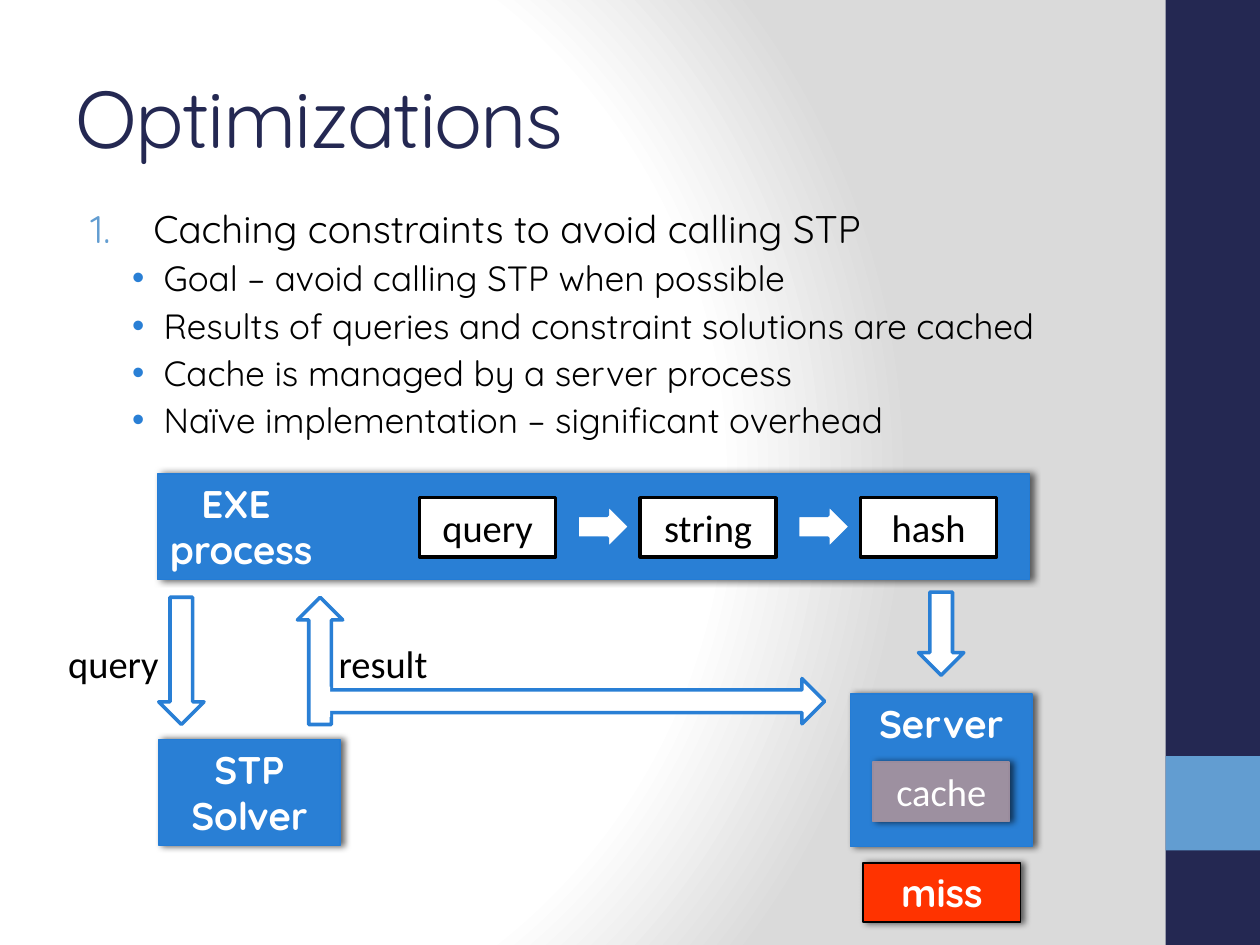
from dataclasses import dataclass
from typing import Optional

from lxml.etree import SubElement
from pptx import Presentation
from pptx.dml.color import RGBColor
from pptx.enum.shapes import MSO_SHAPE
from pptx.enum.text import MSO_ANCHOR, PP_ALIGN
from pptx.oxml import parse_xml
from pptx.oxml.ns import nsdecls, qn
from pptx.util import Inches, Pt

COLORS = {
    "navy": "242852", "sky": "629DD1", "blue": "297FD5", "blue_edge": "247CD5",
    "mauve": "9D90A0", "mauve_edge": "9A8C9D", "red": "FF3300",
    "white": "FFFFFF", "black": "000000", "gray": "DADADA",
}
HEADING_FONT, LABEL_FONT = "Quicksand", "Calibri"


@dataclass(frozen=True)
class Style:
    fill: Optional[str]
    line: Optional[str] = None
    line_width: float = 1
    font: str = LABEL_FONT
    color: str = "black"
    shadow: bool = False


@dataclass(frozen=True)
class Box:
    left: float
    top: float
    width: float
    height: float
    style: Style
    lines: tuple[str, ...] = ()


@dataclass(frozen=True)
class Arrow:
    left: float
    top: float
    length: float
    rotation: int = 0


BAND = Style("navy")
ACCENT = Style("sky")
PROCESS = Style("blue", "blue_edge", 1, HEADING_FONT, "white", True)
STEP = Style("white", "black", 2)
CACHE = Style("mauve", "mauve_edge", 1, LABEL_FONT, "white", True)
MISS = Style("red", "black", 1, HEADING_FONT, "white", True)
PLAIN = Style("white")
CLEAR = Style(None)

ARROW_WIDTH = 0.36
LABEL_SIZE = (1.08, 0.47)


def rgb(name: str) -> RGBColor:
    return RGBColor.from_string(COLORS[name])


def add_run(paragraph, text: str, size: float, font: str, color: str, bold: bool = False):
    run = paragraph.add_run()
    run.text = text
    run.font.size = Pt(size)
    run.font.name = font
    run.font.bold = bold
    run.font.color.rgb = rgb(color)
    return run


def add_shadow(shape) -> None:
    effects = shape._element.spPr.find(qn("a:effectLst"))
    outer = SubElement(effects, qn("a:outerShdw"), blurRad=str(Pt(4)), dist=str(Pt(2)),
                       dir="0", algn="ctr", rotWithShape="0")
    tint = SubElement(outer, qn("a:srgbClr"), val=COLORS["black"])
    SubElement(tint, qn("a:alpha"), val="60000")


def paint(shape, style: Style) -> None:
    shape.shadow.inherit = False
    if style.fill:
        shape.fill.solid()
        shape.fill.fore_color.rgb = rgb(style.fill)
    else:
        shape.fill.background()
    if style.line:
        shape.line.color.rgb = rgb(style.line)
        shape.line.width = Pt(style.line_width)
    else:
        shape.line.fill.background()
    if style.shadow:
        add_shadow(shape)


def add_box(slide, box: Box):
    shape = slide.shapes.add_shape(MSO_SHAPE.RECTANGLE, Inches(box.left), Inches(box.top),
                                   Inches(box.width), Inches(box.height))
    paint(shape, box.style)
    frame = shape.text_frame
    frame.word_wrap = True
    frame.vertical_anchor = MSO_ANCHOR.TOP
    for index, line in enumerate(box.lines):
        paragraph = frame.add_paragraph() if index else frame.paragraphs[0]
        paragraph.alignment = PP_ALIGN.CENTER
        add_run(paragraph, line, 22, box.style.font, box.style.color,
                bold=box.style.font == HEADING_FONT)
    return shape


def add_arrow(slide, arrow: Arrow) -> None:
    shape = slide.shapes.add_shape(MSO_SHAPE.DOWN_ARROW, Inches(arrow.left), Inches(arrow.top),
                                   Inches(ARROW_WIDTH), Inches(arrow.length))
    shape.rotation = arrow.rotation
    paint(shape, Style("white", "blue", 2))


def set_background(slide) -> None:
    stops = "".join(f'<a:gs pos="{position}"><a:srgbClr val="{COLORS[name]}"/></a:gs>'
                    for position, name in ((0, "white"), (75000, "white"), (100000, "gray")))
    slide._element.cSld.insert(0, parse_xml(
        f'<p:bg {nsdecls("p", "a")}><p:bgPr><a:gradFill rotWithShape="1">'
        f'<a:gsLst>{stops}</a:gsLst><a:path path="circle">'
        '<a:fillToRect l="20000" t="50000" r="100000" b="50000"/></a:path>'
        '</a:gradFill><a:effectLst/></p:bgPr></p:bg>'))


def add_title(slide, text: str) -> None:
    title = slide.shapes.title
    title.left, title.top = Inches(0.5), Inches(0.3)
    title.width, title.height = Inches(8.33), Inches(1.25)
    title.text_frame.vertical_anchor = MSO_ANCHOR.MIDDLE
    paragraph = title.text_frame.paragraphs[0]
    paragraph.alignment = PP_ALIGN.LEFT
    run = add_run(paragraph, text, 46, HEADING_FONT, "navy")
    run.font._element.set("spc", "-100")


def add_points(slide, heading: str, points: list[str]) -> None:
    frame = slide.shapes.add_textbox(Inches(0.5), Inches(1.58), Inches(8.33),
                                     Inches(2.18)).text_frame
    frame.word_wrap = True
    for index, text in enumerate([heading, *points]):
        paragraph = frame.add_paragraph() if index else frame.paragraphs[0]
        paragraph.level = 1 if index else 0
        paragraph.space_before = Pt(3)
        margin, hanging, size, color = (0.7, 0.25, 20, "blue") if index else (0.62, 0.5, 22, "sky")
        properties = paragraph._p.get_or_add_pPr()
        properties.set("marL", str(Inches(margin)))
        properties.set("indent", str(-Inches(hanging)))
        SubElement(SubElement(properties, qn("a:buClr")), qn("a:srgbClr"), val=COLORS[color])
        if index:
            SubElement(properties, qn("a:buFont"), typeface="Arial")
            SubElement(properties, qn("a:buChar"), char="•")
        else:
            SubElement(properties, qn("a:buFont"), typeface=HEADING_FONT)
            SubElement(properties, qn("a:buAutoNum"), type="arabicPeriod")
        add_run(paragraph, text, size, HEADING_FONT, "black")


def main() -> None:
    deck = Presentation()
    deck.slide_width, deck.slide_height = Inches(10), Inches(7.5)
    slide = deck.slides.add_slide(deck.slide_layouts[5])
    set_background(slide)

    # Side band and title
    add_box(slide, Box(9.25, 0, 0.75, 7.5, BAND))
    add_box(slide, Box(9.25, 6, 0.75, 0.75, ACCENT))
    add_title(slide, "Optimizations")

    # EXE process with its three steps
    exe = add_box(slide, Box(1.25, 3.76, 6.92, 0.84, PROCESS, ("EXE", "process")))
    for paragraph, margin in zip(exe.text_frame.paragraphs, (0.25, 0)):
        paragraph.alignment = PP_ALIGN.LEFT
        paragraph._p.get_or_add_pPr().set("marL", str(Inches(margin)))
    for index, step in enumerate(("query", "string", "hash")):
        add_box(slide, Box(3.33 + 1.75 * index, 3.95, *LABEL_SIZE, STEP, (step,)))
        if index:
            add_arrow(slide, Arrow(2.86 + 1.75 * index, 3.97, 0.42, 270))

    # Server, solver and labels
    for box in (
        Box(6.75, 5.51, 1.44, 1.21, PROCESS, ("Server",)),
        Box(6.93, 6.05, *LABEL_SIZE, CACHE, ("cache",)),
        Box(6.85, 6.85, 1.25, 0.47, MISS, ("miss",)),
        Box(2.5, 5.03, *LABEL_SIZE, PLAIN, ("result",)),
        Box(1.26, 5.87, 1.44, 0.84, PROCESS, ("STP", "Solver")),
        Box(0.36, 5.03, *LABEL_SIZE, CLEAR, ("query",)),
    ):
        add_box(slide, box)

    # Query, hash and result arrows; a patch joins the two result arrows
    for arrow in (Arrow(1.26, 4.74, 1.01), Arrow(7.29, 4.7, 0.66),
                  Arrow(2.36, 4.74, 1.01, 180), Arrow(4.36, 3.56, 4.01, 270)):
        add_arrow(slide, arrow)
    add_box(slide, Box(2.5, 5.45, 0.12, 0.24, PLAIN))

    add_points(slide, "Caching constraints to avoid calling STP", [
        "Goal – avoid calling STP when possible",
        "Results of queries and constraint solutions are cached",
        "Cache is managed by a server process",
        "Naïve implementation – significant overhead",
    ])
    deck.save("out.pptx")


if __name__ == "__main__":
    main()
